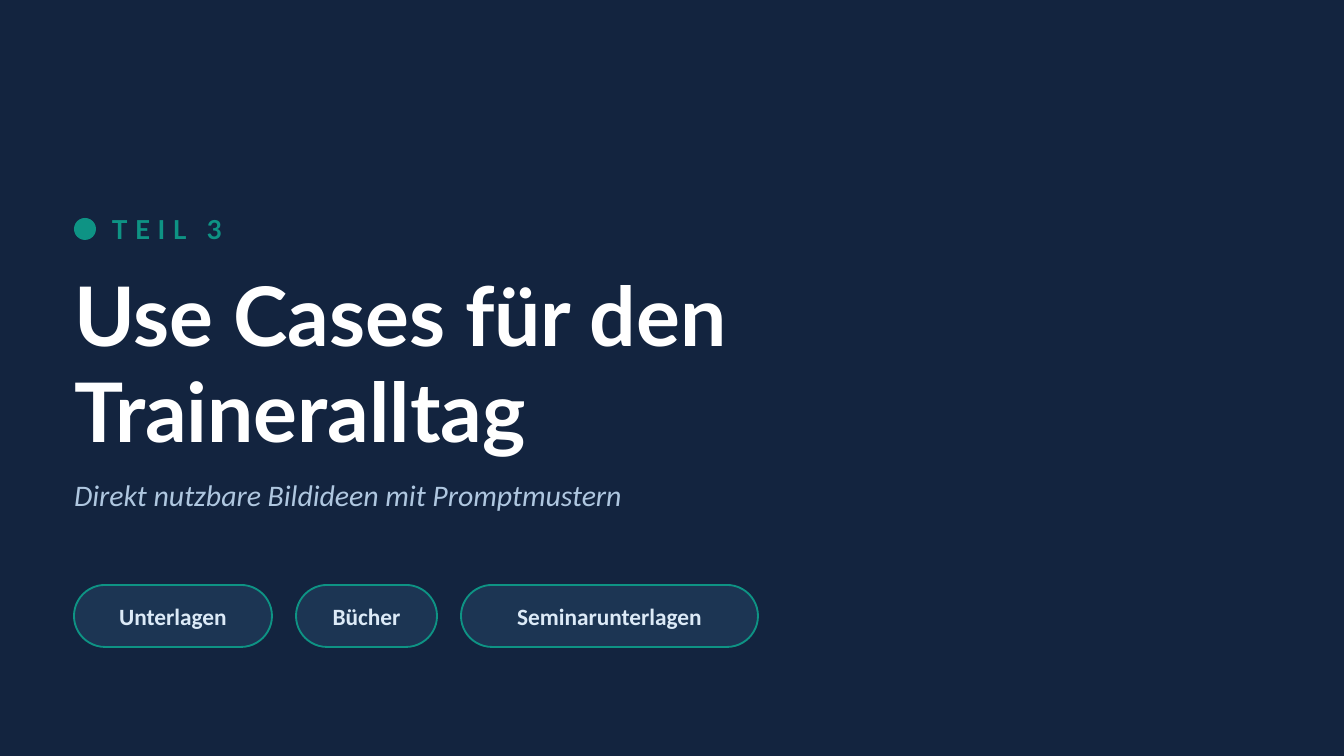
import pptx
import pptx.dml.color
import pptx.enum.shapes
import pptx.enum.text
import pptx.util

PX = 914400 / 134.4
MSO_SHAPE = pptx.enum.shapes.MSO_SHAPE
ANCHOR = pptx.enum.text.MSO_ANCHOR
ALIGN = pptx.enum.text.PP_ALIGN
TEAL = "0E9384"
LEFT = 74


def paint(color_format, value):
    """Set a fill or font colour from a hex string."""
    if hasattr(color_format, "solid"):
        color_format.solid()
        color_format = color_format.fore_color
    color_format.rgb = pptx.dml.color.RGBColor.from_string(value)


def write(sp, box, text, font, size, color, anchor=ANCHOR.TOP, align=ALIGN.LEFT):
    """Place a shape and give it one paragraph without margins."""
    sp.left, sp.top, sp.width, sp.height = [round(v * PX) for v in box]
    tf = sp.text_frame
    tf.word_wrap = True
    tf.auto_size = pptx.enum.text.MSO_AUTO_SIZE.NONE
    tf.vertical_anchor = anchor
    tf.margin_left = tf.margin_top = tf.margin_right = tf.margin_bottom = 0
    p = tf.paragraphs[0]
    p.text = text
    p.alignment = align
    p.space_before = pptx.util.Pt(0)
    p.font.name = font
    p.font.size = pptx.util.Pt(size)
    paint(p.font.color, color)
    return p


prs = pptx.Presentation()
prs.slide_width = round(1344 * PX)
prs.slide_height = round(756 * PX)
s = prs.slides.add_slide(prs.slide_layouts[0])
paint(s.background.fill, "13243F")

# Section marker
dot = s.shapes.add_shape(MSO_SHAPE.OVAL, *[round(v * PX) for v in (LEFT, 218, 22, 22)])
dot.shadow.inherit = False
paint(dot.fill, TEAL)
dot.line.fill.background()

label = s.shapes.add_textbox(0, 0, 0, 0)
p = write(label, (112, 202, 806, 54), "TEIL 3", "Lato", 14, TEAL, ANCHOR.MIDDLE)
p.font.bold = True
p.runs[0].font._element.set("spc", "400")

# Title and subtitle
p = write(s.shapes.title, (LEFT, 269, 833, 228), "Use Cases für den Traineralltag", "Lato", 44, "FFFFFF")
p.font.bold = True
p.line_spacing = 0.98

p = write(s.placeholders[1], (LEFT, 477, 806, 81),
          "Direkt nutzbare Bildideen mit Promptmustern", "Calibri", 16, "AFC7E0")
p.font.italic = True

# Topic pills
x = LEFT
for topic, width in (("Unterlagen", 198), ("Bücher", 141), ("Seminarunterlagen", 297)):
    pill = s.shapes.add_shape(MSO_SHAPE.ROUNDED_RECTANGLE, 0, 0, 0, 0)
    pill.adjustments[0] = 0.5
    pill.shadow.inherit = False
    paint(pill.fill, "1C3553")
    paint(pill.line.fill, TEAL)
    pill.line.width = pptx.util.Pt(1)
    p = write(pill, (x, 585, width, 62), topic, "Calibri", 12.5, "DCEAF7", ANCHOR.MIDDLE, ALIGN.CENTER)
    p.font.bold = True
    x += width + 24

prs.save("out.pptx")
